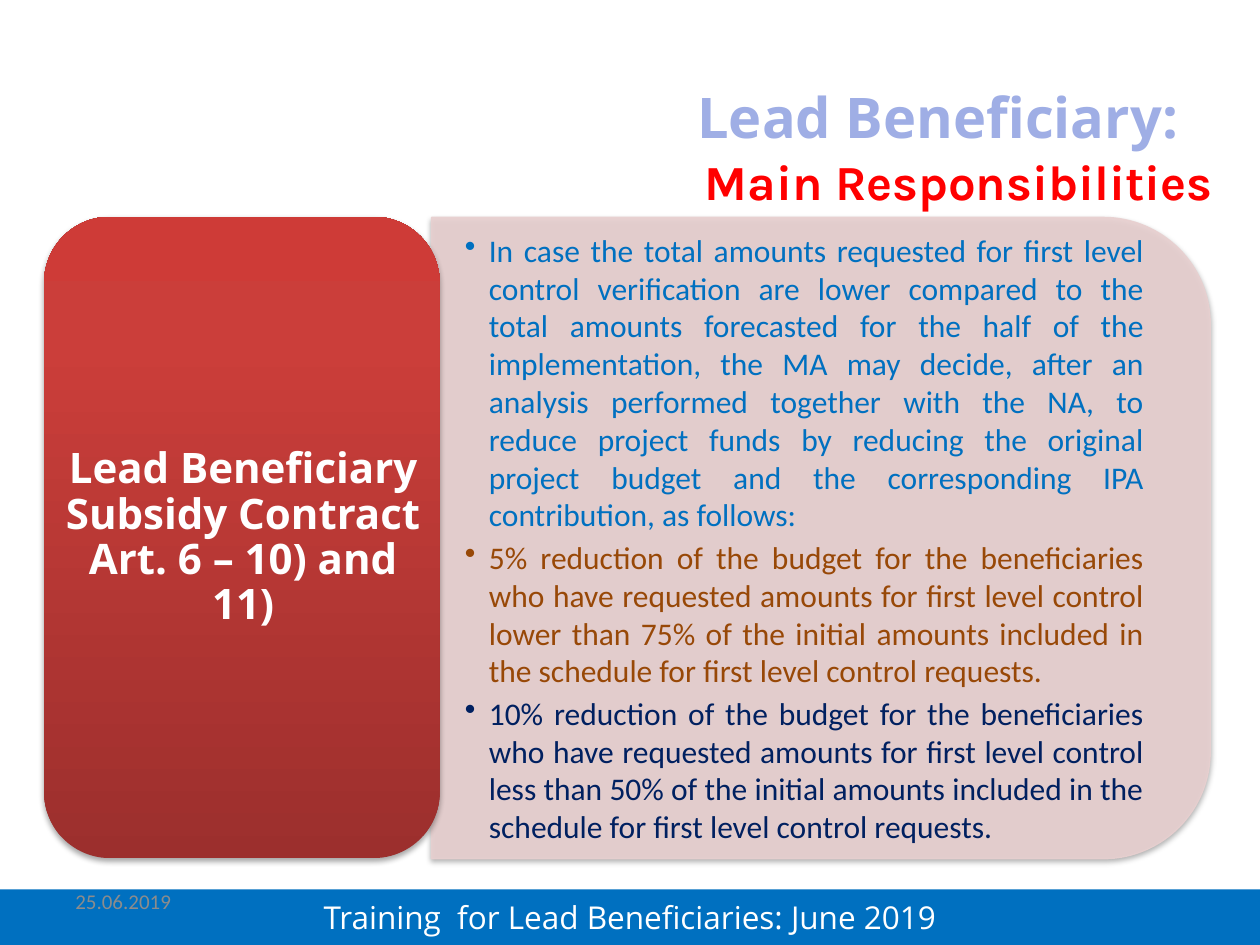
import pptx
import pptx.dml.color
import pptx.enum.shapes
import pptx.enum.text
import pptx.oxml
import pptx.oxml.ns
import pptx.util

Inches = pptx.util.Inches
Pt = pptx.util.Pt
Shape = pptx.enum.shapes.MSO_SHAPE
Anchor = pptx.enum.text.MSO_ANCHOR
Align = pptx.enum.text.PP_ALIGN
NAMESPACE = pptx.oxml.ns.nsdecls("a")

HEADING_FONT = "Open Sans"
BODY_FONT = "Calibri"
BULLETS = [
    ("In case the total amounts requested for first level control verification "
     "are lower compared to the total amounts forecasted for the half of the "
     "implementation, the MA may decide, after an analysis performed together "
     "with the NA, to reduce project funds by reducing the original project "
     "budget and the corresponding IPA contribution, as follows:", "0070C0"),
    ("5% reduction of the budget for the beneficiaries who have requested "
     "amounts for first level control lower than 75% of the initial amounts "
     "included in the schedule for first level control requests.", "984807"),
    ("10% reduction of the budget for the beneficiaries who have requested "
     "amounts for first level control less than 50% of the initial amounts "
     "included in the schedule for first level control requests.", "002060"),
]


def rgb(value):
    return pptx.dml.color.RGBColor.from_string(value)


class SlideBuilder:
    def __init__(self, presentation):
        self.slide = presentation.slides.add_slide(presentation.slide_layouts[5])

    def place(self, shape, box):
        shape.left, shape.top, shape.width, shape.height = map(Inches, box)

    def format_frame(self, shape, anchor, margins=(0.1, 0.05)):
        """Set wrapping, anchor and the (horizontal, vertical) margins."""
        frame = shape.text_frame
        frame.word_wrap = True
        frame.auto_size = pptx.enum.text.MSO_AUTO_SIZE.NONE
        frame.vertical_anchor = anchor
        frame.margin_left = frame.margin_right = Inches(margins[0])
        frame.margin_top = frame.margin_bottom = Inches(margins[1])
        return frame

    def fill_paragraph(self, paragraph, text, size, color, font=HEADING_FONT,
                       bold=False, align=Align.CENTER):
        paragraph.text = text
        paragraph.alignment = align
        paragraph.font.size = Pt(size)
        paragraph.font.name = font
        paragraph.font.bold = bold
        paragraph.font.color.rgb = rgb(color)

    def title(self, text, box, size, color):
        title = self.slide.shapes.title
        self.place(title, box)
        frame = self.format_frame(title, Anchor.MIDDLE)
        self.fill_paragraph(frame.paragraphs[0], text, size, color, bold=True)

    def text(self, text, box, size, color, anchor=Anchor.MIDDLE,
             margins=(0.1, 0.05), **style):
        shape = self.slide.shapes.add_textbox(*map(Inches, box))
        paragraph = self.format_frame(shape, anchor, margins).paragraphs[0]
        self.fill_paragraph(paragraph, text, size, color, **style)
        return paragraph

    def bullets(self, items, box, size):
        shape = self.slide.shapes.add_textbox(*map(Inches, box))
        frame = self.format_frame(shape, Anchor.MIDDLE, (0.27, 0.14))
        for index, (text, color) in enumerate(items):
            paragraph = frame.add_paragraph() if index else frame.paragraphs[0]
            paragraph.space_after = Pt(0.15 * size)
            properties = paragraph._p.get_or_add_pPr()
            properties.set("marL", str(Inches(0.19)))
            properties.set("indent", str(-Inches(0.19)))
            properties.append(pptx.oxml.parse_xml(f'<a:buChar {NAMESPACE} char="•"/>'))
            self.fill_paragraph(paragraph, text, size, color, BODY_FONT,
                                align=Align.JUSTIFY)

    def shape(self, preset, box, color):
        shape = self.slide.shapes.add_shape(preset, *map(Inches, box))
        shape.shadow.inherit = False
        shape.fill.solid()
        shape.fill.fore_color.rgb = rgb(color)
        shape.line.fill.background()
        return shape

    def shadow(self, shape):
        effects = shape._element.spPr.find(pptx.oxml.ns.qn("a:effectLst"))
        effects.append(pptx.oxml.parse_xml(
            f'<a:outerShdw {NAMESPACE} blurRad="{Pt(3.1)}" dist="{Pt(1.8)}" '
            'dir="5400000" rotWithShape="0"><a:srgbClr val="000000">'
            '<a:alpha val="35000"/></a:srgbClr></a:outerShdw>'))

    def transparent(self, shape, opacity):
        """Give the fill and the line the same opacity in percent."""
        for color in shape._element.spPr.iter(pptx.oxml.ns.qn("a:srgbClr")):
            color.append(pptx.oxml.parse_xml(
                f'<a:alpha {NAMESPACE} val="{opacity * 1000}"/>'))

    def upward_gradient(self, shape, stops):
        """Fill from bottom to top with (percent, color) stops."""
        stop_xml = "".join(
            f'<a:gs pos="{percent * 1000}"><a:srgbClr val="{color}"/></a:gs>'
            for percent, color in stops)
        properties = shape._element.spPr
        solid = properties.find(pptx.oxml.ns.qn("a:solidFill"))
        properties.replace(solid, pptx.oxml.parse_xml(
            f'<a:gradFill {NAMESPACE} rotWithShape="1"><a:gsLst>{stop_xml}</a:gsLst>'
            '<a:lin ang="16200000" scaled="0"/></a:gradFill>'))


def main():
    presentation = pptx.Presentation()
    presentation.slide_width = Inches(10)
    presentation.slide_height = Inches(7.5)
    builder = SlideBuilder(presentation)

    footer = builder.shape(Shape.RECTANGLE, (0, 7.06, 10, 0.44), "0070C0")
    frame = builder.format_frame(footer, Anchor.MIDDLE)
    builder.fill_paragraph(frame.paragraphs[0],
                           "Training  for Lead Beneficiaries: June 2019", 18, "FFFFFF")

    builder.title("Lead Beneficiary:", (5.16, 0.54, 4.57, 0.77), 32, "9FAEE5")
    builder.text("Main Responsibilities", (4.37, 1.15, 5.35, 0.57), 28, "FF0000",
                 anchor=Anchor.TOP, font="Karla", bold=True, align=Align.RIGHT)

    panel = builder.shape(Shape.ROUND_2_SAME_RECTANGLE,
                          (3.97, 1.18, 5.09, 6.18), "E8D0D0")
    panel.rotation = 90
    panel.line.color.rgb = rgb("E8D0D0")
    panel.line.width = Pt(0.75)
    builder.transparent(panel, 90)
    builder.shadow(panel)
    builder.bullets(BULLETS, (3.42, 1.97, 5.93, 4.6), 18)

    card = builder.shape(Shape.ROUNDED_RECTANGLE, (0.35, 1.72, 3.14, 5.09), "CB3E3A")
    builder.upward_gradient(card, [(0, "9C2F2D"), (80, "CB3E3A"), (100, "CE3B37")])
    builder.shadow(card)
    contract = builder.text("Lead Beneficiary Subsidy Contract Art. 6 – 10) and 11)",
                            (0.51, 1.88, 2.84, 4.78), 24, "FFFFFF",
                            margins=(0, 0), bold=True)
    contract.line_spacing = 0.9
    contract.space_after = Pt(0.35 * 24)

    builder.text("25.06.2019", (0.5, 6.95, 2.33, 0.4), 12, "8C8C8C",
                 font=BODY_FONT, align=Align.LEFT)
    presentation.save("out.pptx")


if __name__ == "__main__":
    main()
